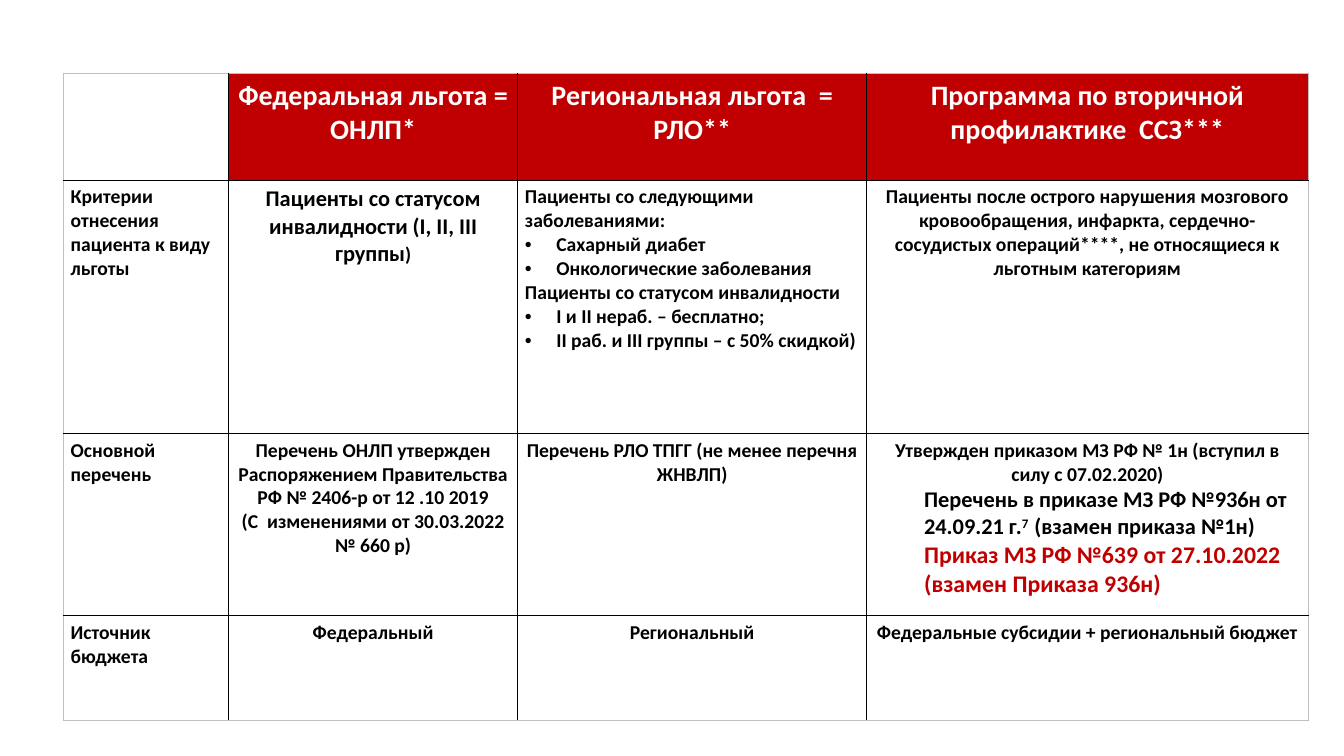
from dataclasses import dataclass

from lxml import etree
from pptx import Presentation
from pptx.dml.color import RGBColor
from pptx.enum import text as t
from pptx.oxml import ns
from pptx.util import Cm, Pt

RED = RGBColor(0xC0, 0x00, 0x00)
WHITE = RGBColor(0xFF, 0xFF, 0xFF)
BLACK = RGBColor(0x00, 0x00, 0x00)
GREY = RGBColor(0xBF, 0xBF, 0xBF)
FONT = "Calibri"

COLUMN_WIDTHS = (4.16, 7.29, 8.79, 11.13)
ROW_HEIGHTS = (2.69, 6.38, 4.6, 2.64)


@dataclass(frozen=True)
class Run:
    text: str
    size: float | None = None
    superscript: bool = False


@dataclass(frozen=True)
class Line:
    runs: tuple[Run, ...]
    size: float = 14
    color: RGBColor = BLACK
    centered: bool = False
    bullet: bool = False
    indent: float = 0


def line(*parts: str | Run, **style) -> Line:
    return Line(tuple(Run(p) if isinstance(p, str) else p for p in parts), **style)


def centered(*parts: str | Run, **style) -> Line:
    return line(*parts, centered=True, **style)


def header(title: str) -> list[Line]:
    return [centered(title, size=20, color=WHITE)]


def bullet(item: str) -> Line:
    return line(item, bullet=True, indent=0.79)


# Table content, row by row
BENEFITS: list[list[list[Line]]] = [
    [
        [],
        header("Федеральная льгота = ОНЛП*"),
        header("Региональная льгота  = РЛО**"),
        header("Программа по вторичной профилактике  ССЗ***"),
    ],
    [
        [line("Критерии отнесения пациента к виду льготы")],
        [centered("Пациенты со статусом инвалидности (I, II, III группы", Run(")", 14), size=16)],
        [
            line("Пациенты со следующими заболеваниями:"),
            bullet("Сахарный диабет"),
            bullet("Онкологические заболевания"),
            line("Пациенты со статусом инвалидности"),
            bullet("I и II нераб. – бесплатно;"),
            bullet("II раб. и III группы – с 50% скидкой)"),
        ],
        [centered("Пациенты после острого нарушения мозгового кровообращения, инфаркта, "
                  "сердечно-сосудистых операций****, не относящиеся к льготным категориям")],
    ],
    [
        [line("Основной перечень")],
        [
            centered("Перечень ОНЛП утвержден Распоряжением Правительства РФ № 2406-р от 12 .10 2019"),
            centered("(С  изменениями от 30.03.2022 № 660 р)"),
        ],
        [centered("Перечень РЛО ТПГГ (не менее перечня ЖНВЛП)")],
        [
            centered("Утвержден приказом МЗ РФ № 1н (вступил в силу с 07.02.2020)"),
            line("Перечень в приказе МЗ РФ №936н от 24.09.21 г.", Run("7  ", superscript=True),
                 "(взамен приказа №1н)", size=16, indent=1.27),
            line("Приказ МЗ РФ №639 от 27.10.2022 (взамен Приказа 936н)",
                 size=17, color=RED, indent=1.27),
        ],
    ],
    [
        [line("Источник бюджета")],
        [centered("Федеральный")],
        [centered("Региональный")],
        [centered("Федеральные субсидии + региональный бюджет")],
    ],
]


def add_run(paragraph, wording: str, *, size: float, color: RGBColor,
            superscript: bool = False) -> None:
    run = paragraph.add_run()
    run.text = wording
    run.font.name = FONT
    run.font.size = Pt(size)
    run.font.bold = True
    run.font.color.rgb = color
    if superscript:
        run.font._element.set("baseline", "30000")


def write_lines(cell, lines: list[Line]) -> None:
    frame = cell.text_frame
    for number, entry in enumerate(lines):
        paragraph = frame.add_paragraph() if number else frame.paragraphs[0]
        paragraph.alignment = t.PP_ALIGN.CENTER if entry.centered else t.PP_ALIGN.LEFT
        properties = paragraph._p.get_or_add_pPr()
        if entry.indent:
            properties.set("marL", str(Cm(entry.indent)))
        if entry.bullet:
            properties.set("indent", str(-Cm(entry.indent)))
            etree.SubElement(properties, ns.qn("a:buFont")).set("typeface", "Arial")
            etree.SubElement(properties, ns.qn("a:buChar")).set("char", "•")
        for run in entry.runs:
            add_run(paragraph, run.text, size=run.size or entry.size,
                    color=entry.color, superscript=run.superscript)


def set_borders(cell, outer_sides: dict[str, bool]) -> None:
    """Outer edges are grey, inner ones black; borders precede the fill."""
    properties = cell._tc.get_or_add_tcPr()
    for position, (side, is_outer) in enumerate(outer_sides.items()):
        border = etree.Element(ns.qn(f"a:ln{side}"), w=str(Pt(1)))
        fill = etree.SubElement(border, ns.qn("a:solidFill"))
        etree.SubElement(fill, ns.qn("a:srgbClr")).set("val", str(GREY if is_outer else BLACK))
        properties.insert(position, border)


def add_benefits_table(slide) -> None:
    row_count, column_count = len(ROW_HEIGHTS), len(COLUMN_WIDTHS)
    table = slide.shapes.add_table(
        row_count, column_count, Cm(1.6), Cm(1.85),
        Cm(sum(COLUMN_WIDTHS)), Cm(sum(ROW_HEIGHTS))).table
    table.first_row = table.horz_banding = False
    for column, width in zip(table.columns, COLUMN_WIDTHS):
        column.width = Cm(width)
    for row, height in zip(table.rows, ROW_HEIGHTS):
        row.height = Cm(height)

    for r, contents in enumerate(BENEFITS):
        for c, lines in enumerate(contents):
            cell = table.cell(r, c)
            cell.margin_left = cell.margin_right = Cm(0.18)
            cell.margin_top = cell.margin_bottom = Cm(0.13)
            cell.fill.solid()
            cell.fill.fore_color.rgb = RED if r == 0 and c > 0 else WHITE
            set_borders(cell, {"L": c == 0, "R": c == column_count - 1,
                               "T": r == 0, "B": r == row_count - 1})
            write_lines(cell, lines)


def main() -> None:
    deck = Presentation()
    deck.slide_width, deck.slide_height = Cm(33.87), Cm(19.05)
    add_benefits_table(deck.slides.add_slide(deck.slide_layouts[6]))
    deck.save("out.pptx")


if __name__ == "__main__":
    main()
